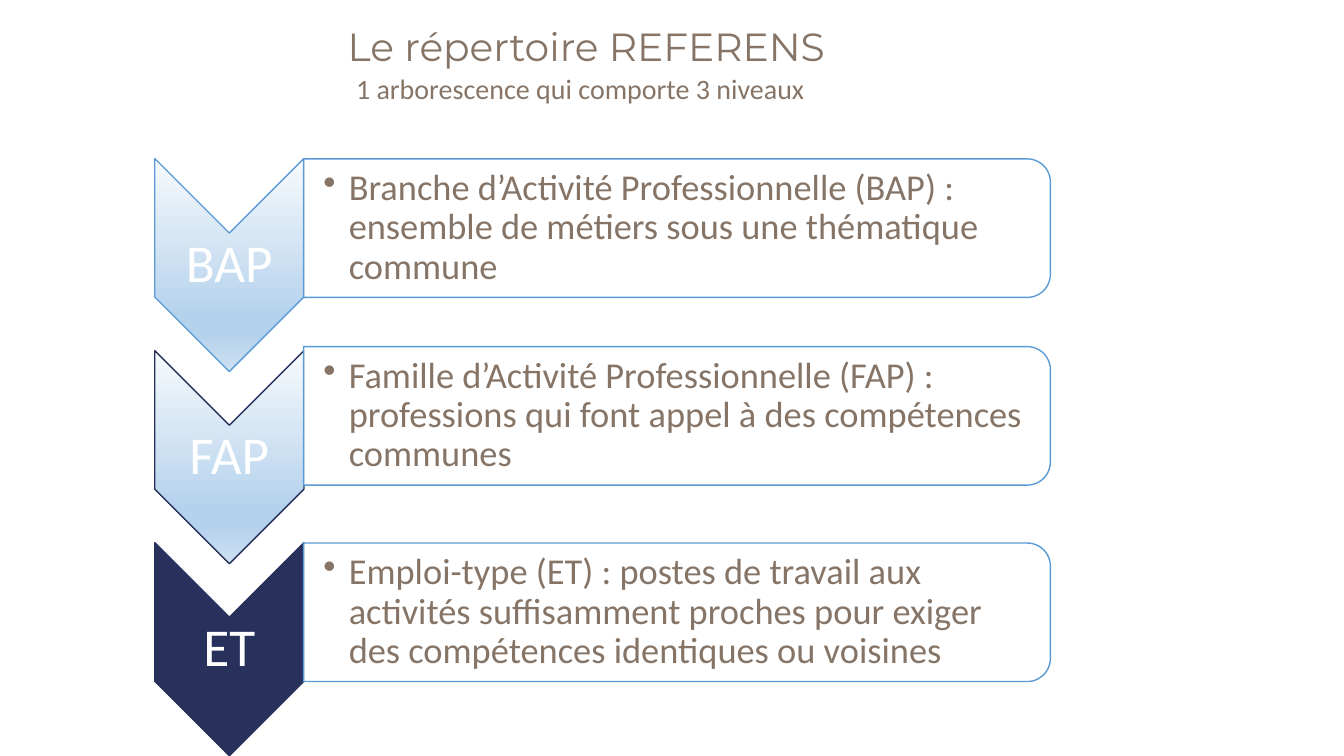
from lxml import etree
from pptx import Presentation
from pptx.dml.color import RGBColor
from pptx.enum.shapes import MSO_SHAPE
from pptx.enum.text import MSO_ANCHOR, PP_ALIGN
from pptx.oxml.ns import qn
from pptx.util import Cm, Pt

CHEVRON, ROUNDED = MSO_SHAPE.CHEVRON, MSO_SHAPE.ROUND_2_SAME_RECTANGLE
CENTER, LEFT = PP_ALIGN.CENTER, PP_ALIGN.LEFT
MIDDLE, TOP = MSO_ANCHOR.MIDDLE, MSO_ANCHOR.TOP

TAUPE = RGBColor(0x86, 0x75, 0x67)
WHITE = RGBColor(0xFF, 0xFF, 0xFF)
NAVY = RGBColor(0x28, 0x31, 0x5B)
BLUE = RGBColor(0x5B, 0x9B, 0xD5)
PALE_BLUE = RGBColor(0xF7, 0xFA, 0xFD)
SOFT_BLUE = RGBColor(0xB5, 0xD2, 0xEC)
LIGHT_BLUE = RGBColor(0xCE, 0xE1, 0xF2)
GRADIENT = [(0, PALE_BLUE), (74, SOFT_BLUE), (83, SOFT_BLUE), (100, LIGHT_BLUE)]

TITLE = {"name": "Montserrat", "size": Pt(28)}
SUBTITLE = {"name": "Calibri", "size": Pt(20)}
LABEL = {"name": "Calibri", "size": Pt(38)}
BODY = {"name": "Calibri", "size": Pt(26)}
LABEL_INSETS = dict.fromkeys(
    ("margin_left", "margin_right", "margin_top", "margin_bottom"), Cm(0.08))
BODY_INSETS = {"margin_left": Cm(0.5), "margin_right": Cm(0.05),
               "margin_top": Cm(0.05), "margin_bottom": Cm(0.05)}

CHEVRON_X, FIRST_CHEVRON_Y, CHEVRON_PITCH = 5.78, 6.68, 4.84
PANEL_X = 17.06
LEVELS = [
    ("BAP", 5.75, GRADIENT, BLUE,
     "Branche d’Activité Professionnelle (BAP) : ensemble de métiers sous une "
     "thématique commune"),
    ("FAP", 10.48, GRADIENT, NAVY,
     "Famille d’Activité Professionnelle (FAP) : professions qui font appel à des "
     "compétences communes"),
    ("ET", 15.43, None, NAVY,
     "Emploi-type (ET) : postes de travail aux activités suffisamment proches pour "
     "exiger des compétences identiques ou voisines"),
]


def add_text(page, place, text, font, color, align=CENTER, anchor=TOP, insets=None):
    """Add a wrapped one-paragraph text box and return its paragraph."""
    frame = page.shapes.add_textbox(*map(Cm, place)).text_frame
    settings = {"word_wrap": True, "vertical_anchor": anchor, **(insets or {})}
    for name, value in settings.items():
        setattr(frame, name, value)
    para = frame.paragraphs[0]
    para.alignment = align
    span = para.add_run()
    span.text = text
    for name, value in font.items():
        setattr(span.font, name, value)
    span.font.color.rgb = color
    return para


def add_turned_shape(page, kind, center_x, center_y, length, breadth, fill, line):
    """Add a shape turned a quarter clockwise around its center."""
    shape = page.shapes.add_shape(kind, Cm(center_x - length / 2),
                                  Cm(center_y - breadth / 2), Cm(length), Cm(breadth))
    shape.rotation = 90
    shape.shadow.inherit = False
    shape.fill.solid()
    shape.fill.fore_color.rgb = fill
    shape.line.color.rgb = line
    shape.line.width = Pt(1)
    return shape


def set_gradient(shape, stops):
    """Fill a shape with a linear gradient along its length."""
    shape.fill.gradient()
    shape.fill.gradient_angle = 0
    stop_list = shape.fill._xPr.find(qn("a:gradFill")).find(qn("a:gsLst"))
    for old_stop in list(stop_list):
        stop_list.remove(old_stop)
    for position, color in stops:
        stop = etree.SubElement(stop_list, qn("a:gs"), pos=str(position * 1000))
        etree.SubElement(stop, qn("a:srgbClr"), val=str(color))


def set_opacity(shape, percent):
    """Make the solid fill of a shape partly transparent."""
    color = shape.fill._xPr.find(qn("a:solidFill")).find(qn("a:srgbClr"))
    etree.SubElement(color, qn("a:alpha"), val=str(percent * 1000))


def add_bullet(para):
    """Give a paragraph a hanging round bullet."""
    properties = para._p.get_or_add_pPr()
    properties.set("marL", str(Cm(0.64)))
    properties.set("indent", str(-Cm(0.64)))
    etree.SubElement(properties, qn("a:buChar"), char="•")


def add_level(page, label, chevron_y, panel_y, gradient, line, description):
    """Add one level: a chevron with its label and a panel with its description."""
    chevron = add_turned_shape(page, CHEVRON, CHEVRON_X, chevron_y, 5.37, 3.76, NAVY, line)
    if gradient:
        set_gradient(chevron, gradient)
    name = add_text(page, (3.9, chevron_y - 0.8, 3.76, 1.6), label, LABEL, WHITE,
                    CENTER, MIDDLE, LABEL_INSETS)
    name.line_spacing = 0.9
    panel = add_turned_shape(page, ROUNDED, PANEL_X, panel_y, 3.49, 18.82, WHITE, BLUE)
    set_opacity(panel, 90)
    body = add_text(page, (7.65, panel_y - 1.57, 18.65, 3.14), description, BODY, TAUPE,
                    LEFT, MIDDLE, BODY_INSETS)
    body.line_spacing = 0.9
    add_bullet(body)


def main():
    """Build the slide and save the deck."""
    deck = Presentation()
    deck.slide_width, deck.slide_height = Cm(33.87), Cm(19.05)
    page = deck.slides.add_slide(deck.slide_layouts[6])
    add_text(page, (4.6, 0.43, 20.35, 1.45), "Le répertoire REFERENS", TITLE, TAUPE)
    add_text(page, (4.45, 1.68, 20.35, 1.11), "1 arborescence qui comporte 3 niveaux",
             SUBTITLE, TAUPE)
    for index, (label, panel_y, gradient, line, description) in enumerate(LEVELS):
        chevron_y = FIRST_CHEVRON_Y + index * CHEVRON_PITCH
        add_level(page, label, chevron_y, panel_y, gradient, line, description)
    deck.save("out.pptx")


if __name__ == "__main__":
    main()
